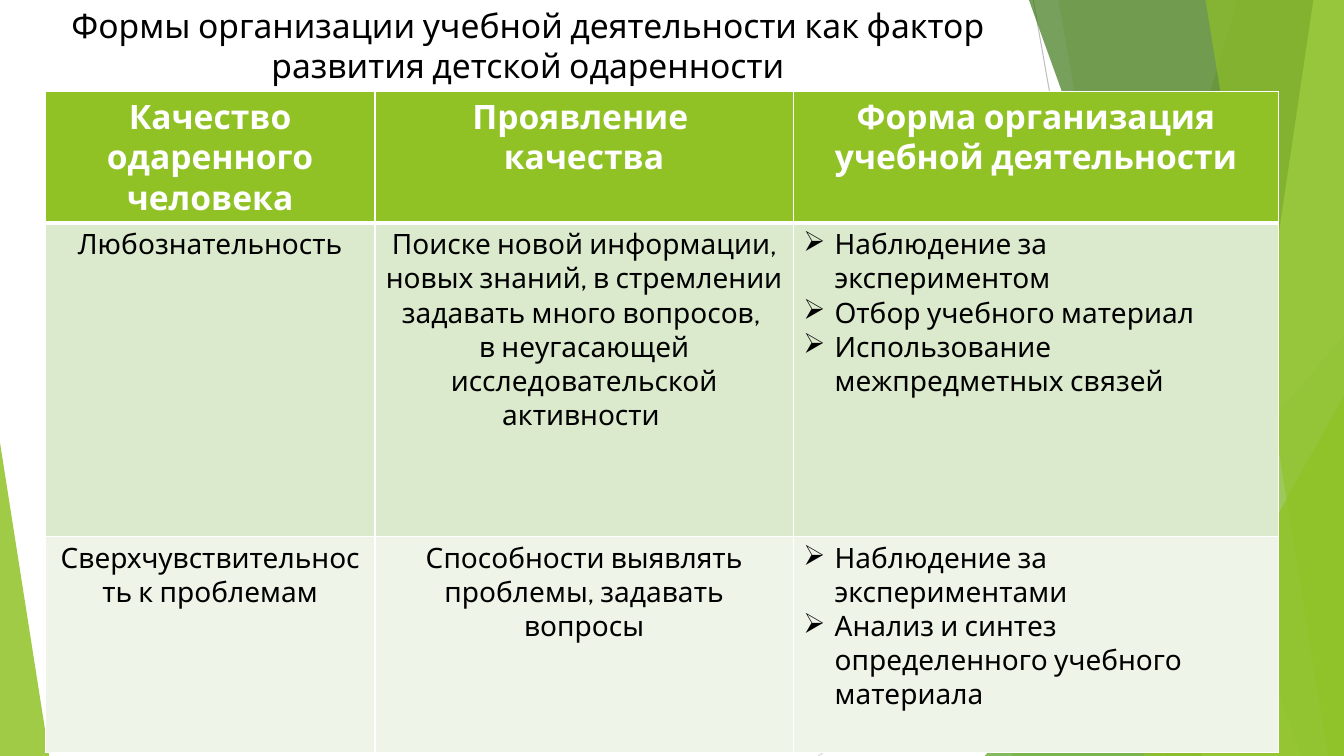
from lxml import etree
from pptx import Presentation
from pptx.dml.color import RGBColor
from pptx.enum.shapes import MSO_CONNECTOR, MSO_SHAPE
from pptx.enum.text import PP_ALIGN
from pptx.oxml import parse_xml
from pptx.oxml.ns import nsdecls, qn
from pptx.util import Cm, Pt

FONT = "Cabin"
C = {
    "green": "90C226", "grass": "54A021", "forest": "3F7819", "lime": "C0E474",
    "white": "FFFFFF", "black": "000000", "gray": "BFBFBF", "light_gray": "D9D9D9",
    "row_dark": "DBE9CD", "row_light": "EEF4E8",
}
SLIDE_W, SLIDE_H = 33.87, 19.05

TITLE = "Формы организации учебной деятельности как фактор развития детской одаренности"
COLS = [8.31, 10.54, 12.24]
ROWS = [3.25, 7.9, 5.44]
ROW_FILLS = ["green", "row_dark", "row_light"]
CELLS = [
    [["Качество одаренного человека"],
     ["Проявление ", "качества"],
     ["Форма организация учебной деятельности"]],
    [["Любознательность"],
     ["Поиске новой информации, новых знаний, в стремлении задавать много вопросов, ",
      "в неугасающей исследовательской активности "],
     ["Наблюдение за экспериментом", "Отбор учебного материал",
      "Использование межпредметных связей"]],
    [["Сверхчувствительность к проблемам"],
     ["Способности выявлять проблемы, задавать вопросы"],
     ["Наблюдение за экспериментами",
      "Анализ и синтез определенного учебного материала"]],
]


def paint(sp, color, opacity):
    """Fill a shape with a translucent colour and no outline."""
    sp.shadow.inherit = False
    sp.line.fill.background()
    sp.fill.solid()
    sp.fill.fore_color.rgb = RGBColor.from_string(C[color])
    clr = sp.fill._xPr.find(qn("a:solidFill"))[0]
    etree.SubElement(clr, qn("a:alpha")).set("val", str(opacity * 1000))


def add_line(s, x1, y1, x2, y2, color):
    line = s.shapes.add_connector(MSO_CONNECTOR.STRAIGHT, Cm(x1), Cm(y1), Cm(x2), Cm(y2))
    line.line.color.rgb = RGBColor.from_string(C[color])
    line.line.width = Pt(0.75)
    etree.SubElement(line._element.spPr, qn("a:effectLst"))


def add_facet(s, box, top_x, bottom_x, color, opacity):
    """Band from a slanted left edge to the right side of the box."""
    x, y, w, h = box
    points = [(x + top_x, y), (x + w, y), (x + w, y + h), (x + bottom_x, y + h)]
    points = [(Cm(px), Cm(py)) for px, py in points]
    fb = s.shapes.build_freeform(*points[0])
    fb.add_line_segments(points[1:], close=True)
    paint(fb.convert_to_shape(), color, opacity)


def add_corner(s, box, w, h, apex, color, opacity):
    """Triangle in the bottom left (apex 0) or bottom right (apex 1) corner."""
    x, y, box_w, box_h = box
    sp = s.shapes.add_shape(MSO_SHAPE.ISOSCELES_TRIANGLE, Cm(x + apex * (box_w - w)),
                            Cm(y + box_h - h), Cm(w), Cm(h))
    sp.adjustments[0] = apex
    paint(sp, color, opacity)


def add_background(s, box):
    x, y, w, h = box
    add_line(s, x + 26.04, y, x + 29.41, y + h, "gray")
    add_line(s, x + w, y + 10.24, x + 20.62, y + h, "light_gray")
    add_facet(s, box, 31.19, 25.5, "green", 30)
    add_facet(s, box, 26.67, 30.05, "green", 20)
    add_corner(s, box, 9.05, 10.59, 1, "grass", 72)
    add_facet(s, box, 25.93, 32.79, "forest", 70)
    add_facet(s, box, 33.1, 30.28, "lime", 70)
    add_facet(s, box, 30.38, 33.48, "green", 65)
    add_corner(s, box, 5.05, 9.07, 1, "green", 80)
    add_corner(s, box, 1.24, 7.9, 0, "green", 85)


def write(tf, lines, size, color, bold=False, bullets=False):
    tf.word_wrap = True
    for i, text in enumerate(lines):
        p = tf.add_paragraph() if i else tf.paragraphs[0]
        p.alignment = PP_ALIGN.LEFT if bullets else PP_ALIGN.CENTER
        if bullets:
            pPr = p._p.get_or_add_pPr()
            pPr.set("marL", str(Cm(0.79)))
            pPr.set("indent", str(-Cm(0.79)))
            etree.SubElement(pPr, qn("a:buChar")).set("char", "➢")
        r = p.add_run()
        r.text = text
        r.font.name = FONT
        r.font.size = Pt(size)
        r.font.bold = bold
        r.font.color.rgb = RGBColor.from_string(C[color])


def add_title(s, box):
    tb = s.shapes.add_textbox(*map(Cm, box))
    write(tb.text_frame, [TITLE], 24, "black")


def style_cell(cell, fill, top, bottom):
    """Set white borders, with top and bottom widths in points, and the fill."""
    tcPr = cell._tc.get_or_add_tcPr()
    for side, width in zip("LRTB", (1, 1, top, bottom)):
        tcPr.append(parse_xml(
            f'<a:ln{side} {nsdecls("a")} w="{Pt(width)}"><a:solidFill>'
            f'<a:srgbClr val="{C["white"]}"/></a:solidFill></a:ln{side}>'))
    cell.fill.solid()
    cell.fill.fore_color.rgb = RGBColor.from_string(C[fill])


def add_qualities_table(s, box):
    table = s.shapes.add_table(len(ROWS), len(COLS), *map(Cm, box)).table
    table.horz_banding = False
    for col, width in zip(table.columns, COLS):
        col.width = Cm(width)
    for i, (height, fill, row) in enumerate(zip(ROWS, ROW_FILLS, CELLS)):
        table.rows[i].height = Cm(height)
        header = i == 0
        for j, lines in enumerate(row):
            cell = table.cell(i, j)
            style_cell(cell, fill, 3 if i == 1 else 1, 3 if header else 1)
            write(cell.text_frame, lines, 24 if header else 20,
                  "white" if header else "black", header, not header and j == 2)


def main():
    prs = Presentation()
    prs.slide_width, prs.slide_height = Cm(SLIDE_W), Cm(SLIDE_H)
    s = prs.slides.add_slide(prs.slide_layouts[6])
    s.background.fill.solid()
    s.background.fill.fore_color.rgb = RGBColor.from_string(C["white"])
    add_background(s, (0, 0, SLIDE_W, SLIDE_H))
    add_title(s, (0.25, 0, 26.11, 2.31))
    add_qualities_table(s, (1.14, 2.31, sum(COLS), sum(ROWS)))
    prs.save("out.pptx")


if __name__ == "__main__":
    main()
